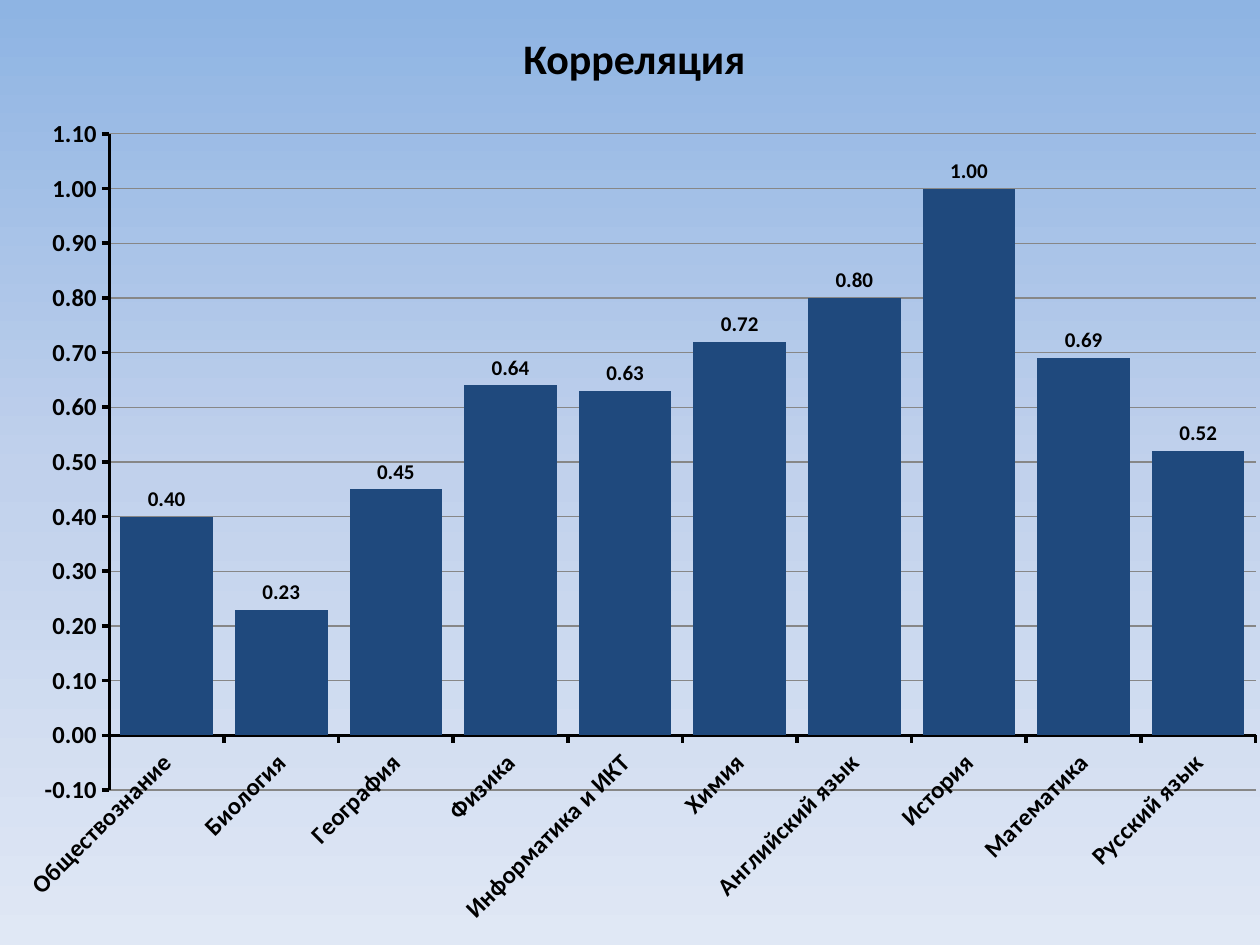
from copy import deepcopy
from dataclasses import dataclass

from lxml import etree
from pptx import Presentation
from pptx.chart.data import CategoryChartData
from pptx.dml.color import RGBColor
from pptx.enum.chart import XL_CHART_TYPE, XL_LABEL_POSITION, XL_TICK_MARK
from pptx.enum.text import MSO_ANCHOR, PP_ALIGN
from pptx.oxml.ns import qn
from pptx.util import Pt

COLUMNS = XL_CHART_TYPE.COLUMN_CLUSTERED
OUTSIDE_END = XL_LABEL_POSITION.OUTSIDE_END
TICK_OUTSIDE, TICK_NONE = XL_TICK_MARK.OUTSIDE, XL_TICK_MARK.NONE


@dataclass(frozen=True)
class Theme:
    font: str = "Calibri"
    ink: RGBColor = RGBColor.from_string("000000")
    bar: RGBColor = RGBColor.from_string("1F497D")
    grid: RGBColor = RGBColor.from_string("878787")
    background: tuple = ((0, "8EB4E3"), (0.5, "C1D1EC"), (1, "E0E8F5"))
    title_size: Pt = Pt(24)
    axis_size: Pt = Pt(14)
    label_size: Pt = Pt(12)
    base_size: Pt = Pt(10)


THEME = Theme()
CORRELATIONS = {
    "Обществознание": 0.40,
    "Биология": 0.23,
    "География": 0.45,
    "Физика": 0.64,
    "Информатика и ИКТ": 0.63,
    "Химия": 0.72,
    "Английский язык": 0.80,
    "История": 1.00,
    "Математика": 0.69,
    "Русский язык": 0.52,
}
CHART_TOP, CHART_WIDTH, CHART_HEIGHT = Pt(61), Pt(732), Pt(479)
PLOT_LEFT, PLOT_TOP, PLOT_WIDTH, PLOT_HEIGHT = Pt(62.5), Pt(15.5), Pt(655), Pt(375)


def style_font(font, size, bold=True):
    font.name = THEME.font
    font.size = size
    font.bold = bold
    font.color.rgb = THEME.ink


presentation = Presentation()
presentation.slide_width, presentation.slide_height = Pt(720), Pt(540)
slide = presentation.slides.add_slide(presentation.slide_layouts[5])

# Background: three stops, running from top to bottom
background = slide.background.fill
background.gradient()
background.gradient_angle = 270
stop_list = slide.element.find(".//" + qn("a:gsLst"))
stop_list.append(deepcopy(stop_list[-1]))
for stop, (position, color) in zip(background.gradient_stops, THEME.background):
    stop.position = position
    stop.color.rgb = RGBColor.from_string(color)

# Title: no side margins, so that the word fits on one line
title = slide.shapes.title
title.left, title.top, title.width, title.height = Pt(292), Pt(15), Pt(141), Pt(37)
title_frame = title.text_frame
title_frame.text = "Корреляция"
title_frame.word_wrap = False
title_frame.margin_left = title_frame.margin_right = 0
title_frame.vertical_anchor = MSO_ANCHOR.TOP
heading = title_frame.paragraphs[0]
heading.alignment = PP_ALIGN.CENTER
style_font(heading.font, THEME.title_size)

# Chart
chart_data = CategoryChartData(number_format="0.00")
chart_data.categories = list(CORRELATIONS)
chart_data.add_series("Корреляция", list(CORRELATIONS.values()))
chart = slide.shapes.add_chart(
    COLUMNS, Pt(0), CHART_TOP, CHART_WIDTH, CHART_HEIGHT, chart_data
).chart
chart.has_title = False
chart.has_legend = False
style_font(chart.font, THEME.base_size, bold=False)

columns = chart.plots[0]
columns.gap_width = 24
columns.vary_by_categories = False
bar_fill = columns.series[0].format.fill
bar_fill.solid()
bar_fill.fore_color.rgb = THEME.bar

columns.has_data_labels = True
labels = columns.data_labels
labels.show_value = True
labels.position = OUTSIDE_END
labels.number_format = "0.00"
labels.number_format_is_linked = False
style_font(labels.font, THEME.label_size)

for axis in (chart.category_axis, chart.value_axis):
    axis.major_tick_mark = TICK_OUTSIDE
    axis.minor_tick_mark = TICK_NONE
    axis.format.line.color.rgb = THEME.ink
    axis.format.line.width = Pt(2)
    style_font(axis.tick_labels.font, THEME.axis_size)

value_axis = chart.value_axis
value_axis.minimum_scale, value_axis.maximum_scale = -0.1, 1.1
value_axis.major_unit = 0.1
value_axis.tick_labels.number_format = "0.00"
value_axis.tick_labels.number_format_is_linked = False
value_axis.has_major_gridlines = True
gridline = value_axis.major_gridlines.format.line
gridline.color.rgb = THEME.grid
gridline.width = Pt(0.75)

# Subject names slant upwards at 45 degrees
subject_axis = chart.element.find(".//" + qn("c:catAx"))
subject_text = subject_axis.find(qn("c:txPr")).find(qn("a:bodyPr"))
subject_text.set("rot", str(-45 * 60000))
subject_text.set("vert", "horz")

# Fixed inner plot area, in fractions of the chart
plot_area = chart.element.find(".//" + qn("c:plotArea"))
layout = plot_area.find(qn("c:layout"))
if layout is None:
    layout = etree.Element(qn("c:layout"))
    plot_area.insert(0, layout)
manual = etree.SubElement(layout, qn("c:manualLayout"))
settings = {
    "layoutTarget": "inner",
    "xMode": "edge",
    "yMode": "edge",
    "x": PLOT_LEFT / CHART_WIDTH,
    "y": PLOT_TOP / CHART_HEIGHT,
    "w": PLOT_WIDTH / CHART_WIDTH,
    "h": PLOT_HEIGHT / CHART_HEIGHT,
}
for name, value in settings.items():
    etree.SubElement(manual, qn(f"c:{name}")).set("val", str(value))

presentation.save("out.pptx")
